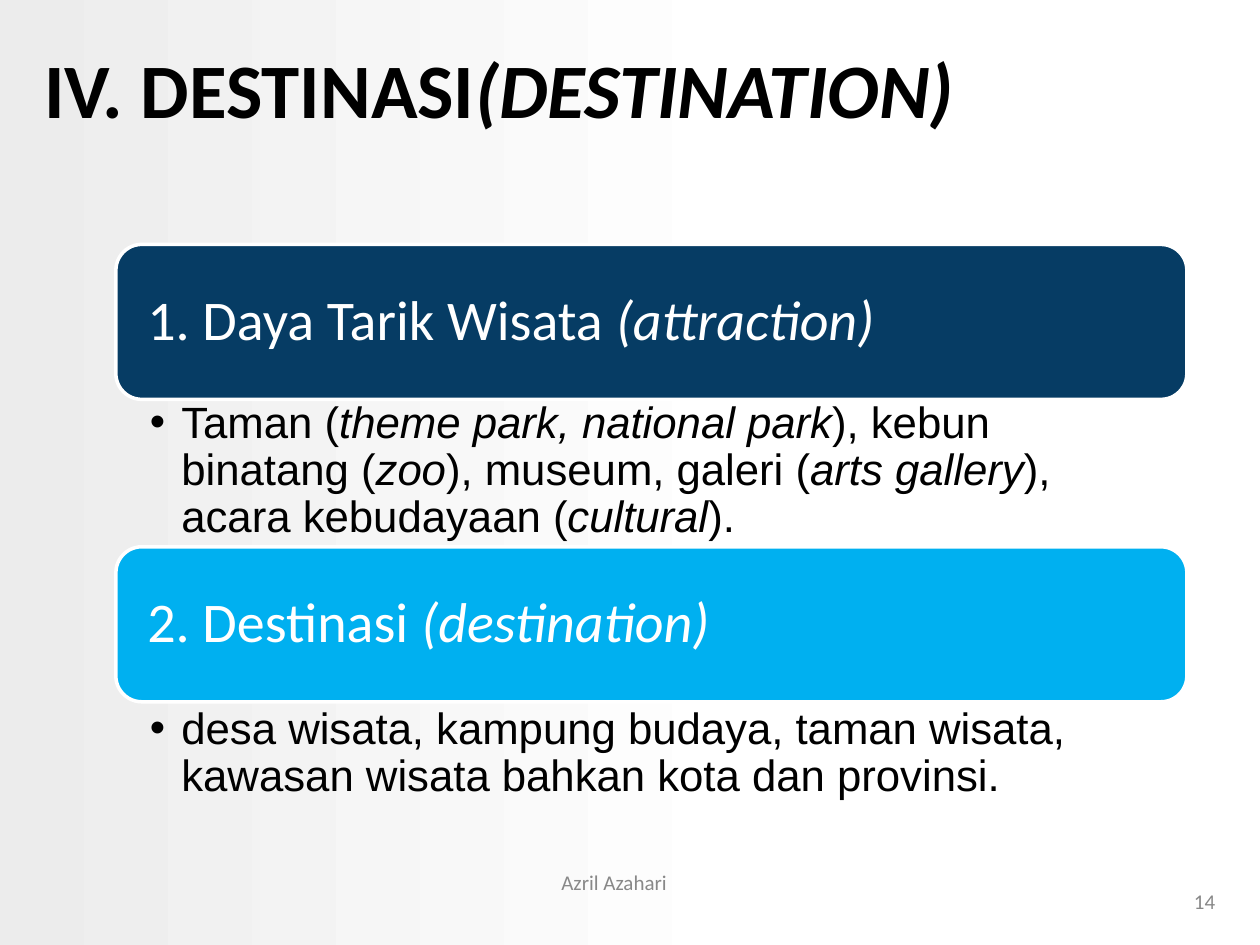
from lxml import etree
from pptx import Presentation
from pptx.dml.color import RGBColor
from pptx.enum import shapes, text
from pptx.oxml.ns import qn
from pptx.util import Pt

LEFT, WIDE = 66.24, 612
BAR_H = 88.56
MID, TOP = text.MSO_ANCHOR.MIDDLE, text.MSO_ANCHOR.TOP
ALIGN = text.PP_ALIGN

TITLE = dict(name="Calibri", size=Pt(44), bold=True)
HEAD = dict(name="Calibri", size=Pt(32))
BODY = dict(name="Arial", size=Pt(25))
NOTE = dict(name="Calibri", size=Pt(12))

# Text between asterisks is italic.
TOPICS = [
    (139.68, "063C64", "1. Daya Tarik Wisata *(attraction)*", 226.8, 85.68,
     "Taman (*theme park, national park*), kebun binatang (*zoo*), museum, "
     "galeri (*arts gallery*), acara kebudayaan (*cultural*)."),
    (312.48, "00B0F0", "2. Destinasi *(destination)*", 401.76, 78.48,
     "desa wisata, kampung budaya, taman wisata, kawasan wisata bahkan "
     "kota dan provinsi."),
]


def color(code):
    return RGBColor.from_string(code)


def write(shape, words, style, ink, align=ALIGN.LEFT, anchor=MID,
          pads=(7.2, 3.6, 7.2, 3.6), space=None):
    """Fill a shape with one paragraph; pads are left, top, right, bottom."""
    frame = shape.text_frame
    frame.word_wrap = True
    frame.auto_size = text.MSO_AUTO_SIZE.NONE
    frame.vertical_anchor = anchor
    for side, pad in zip(("left", "top", "right", "bottom"), pads):
        setattr(frame, "margin_" + side, Pt(pad))
    para = frame.paragraphs[0]
    para.alignment = align
    if space:
        para.line_spacing = space
    for i, part in enumerate(words.split("*")):
        if part:
            run = para.add_run()
            run.text = part
            for key, value in style.items():
                setattr(run.font, key, value)
            run.font.italic = i % 2 == 1
            run.font.color.rgb = color(ink)
    return para


def add_box(slide, x, y, w, h):
    return slide.shapes.add_textbox(Pt(x), Pt(y), Pt(w), Pt(h))


def add_bar(slide, y, fill, words):
    bar = slide.shapes.add_shape(shapes.MSO_SHAPE.ROUNDED_RECTANGLE,
                                 Pt(LEFT), Pt(y), Pt(WIDE), Pt(BAR_H))
    bar.shadow.inherit = False
    bar.adjustments[0] = 0.167
    bar.fill.solid()
    bar.fill.fore_color.rgb = color(fill)
    bar.line.color.rgb = color("FFFFFF")
    bar.line.width = Pt(2)
    write(bar, words, HEAD, "FFFFFF", pads=(13.68, 9.36, 13.68, 9.36),
          space=0.9)


def add_point(slide, y, h, words):
    box = add_box(slide, LEFT, y, WIDE, h)
    para = write(box, words, BODY, "000000", anchor=TOP,
                 pads=(19.44, 2.16, 13.68, 2.16), space=0.9)
    props = para._p.get_or_add_pPr()
    props.set("marL", str(Pt(18)))
    props.set("indent", str(Pt(-18)))
    tint = etree.SubElement(props, qn("a:buClr"))
    etree.SubElement(tint, qn("a:srgbClr"), val="000000")
    etree.SubElement(props, qn("a:buFont"), typeface="Arial")
    etree.SubElement(props, qn("a:buChar"), char="•")


def set_back(slide):
    fill = slide.background.fill
    fill.gradient()
    fill.gradient_angle = 0
    for stop, (place, code) in zip(fill.gradient_stops,
                                   [(0, "ECECEC"), (0.6, "FFFFFF")]):
        stop.position = place
        stop.color.rgb = color(code)


def set_title(slide, words):
    title = slide.shapes.title
    title.left, title.top = Pt(18), Pt(5)
    title.width, title.height = Pt(552), Pt(90)
    write(title, words, TITLE, "000000")


def main():
    deck = Presentation()
    deck.slide_width, deck.slide_height = Pt(720), Pt(540)
    slide = deck.slides.add_slide(deck.slide_layouts[5])
    set_back(slide)
    set_title(slide, "IV. DESTINASI*(DESTINATION)*")
    for bar_y, fill, head, y, h, body in TOPICS:
        add_bar(slide, bar_y, fill, head)
        add_point(slide, y, h, body)
    write(add_box(slide, 246, 486, 210, 36), "Azril Azahari", NOTE, "888888",
          ALIGN.CENTER)
    write(add_box(slide, 533.5, 500.5, 168, 28.8), "14", NOTE, "888888",
          ALIGN.RIGHT)
    deck.save("out.pptx")


if __name__ == "__main__":
    main()
